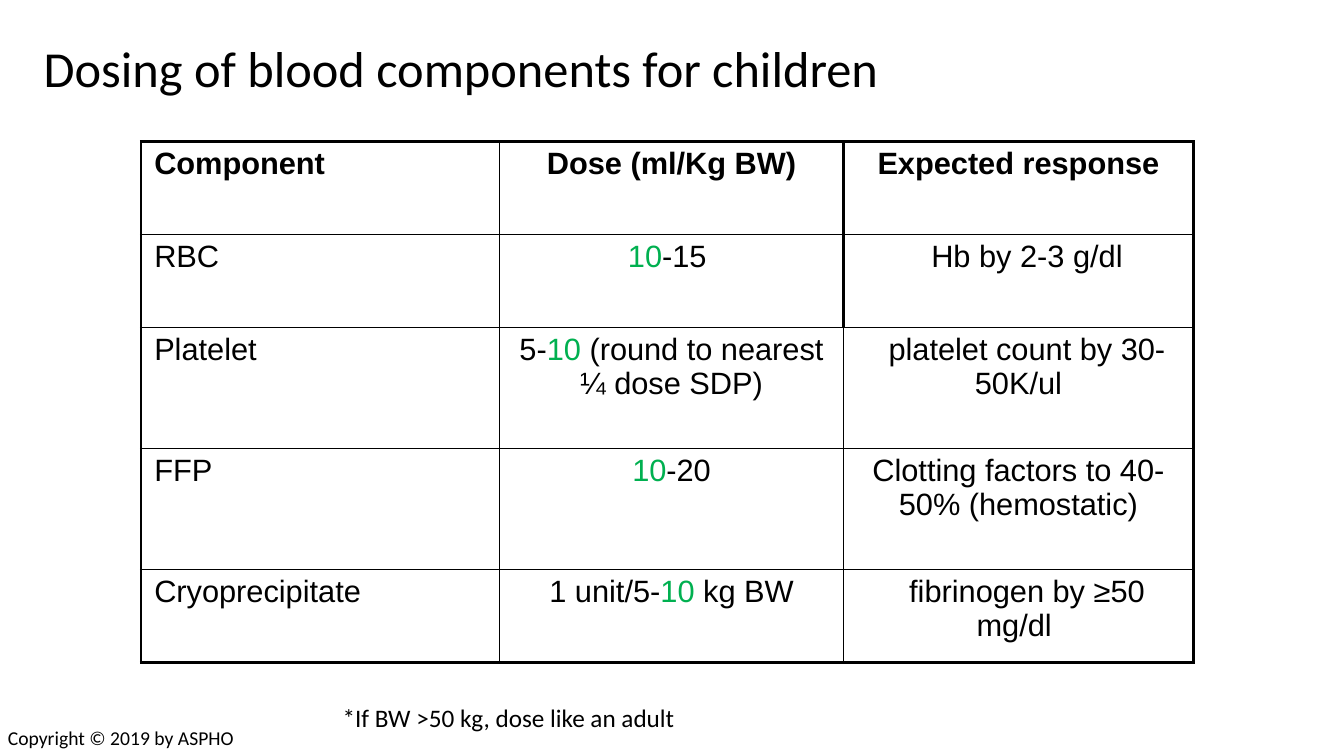
from lxml.etree import SubElement
from pptx import Presentation
from pptx.dml.color import RGBColor
from pptx.enum.text import MSO_ANCHOR as Anchor, MSO_AUTO_SIZE as AutoSize, PP_ALIGN as Align
from pptx.oxml import parse_xml
from pptx.oxml.ns import nsdecls, qn
from pptx.util import Pt

COLORS = {"ink": "000000", "key dose": "00B050"}
KEY_DOSE = "10"
THIN, THICK = 1, 2.25
SPACE_SHIFT = 12.2  # first-line indent of the rising responses

COLUMN_WIDTHS = (256.2, 245.4, 250.2)
ROW_HEIGHTS = (66.4, 66.4, 86.4, 86.4, 66.4)
DOSING = (
    ("Component", "Dose (ml/Kg BW)", "Expected response"),
    ("RBC", "10-15 ", "Hb by 2-3 g/dl"),
    ("Platelet", "5-10 (round to nearest ¼ dose SDP)", "platelet count by 30-50K/ul"),
    ("FFP", "10-20", "Clotting factors to 40-50% (hemostatic)"),
    ("Cryoprecipitate", "1 unit/5-10 kg BW", "fibrinogen by ≥50 mg/dl "),
)
INDENTED_ROWS = (1, 2, 4)


def style_font(font, size, face, color="ink", bold=False):
    font.size, font.name, font.bold = Pt(size), face, bold
    font.color.rgb = RGBColor.from_string(COLORS[color])


def add_title(slide, left, top, width, height):
    title = slide.shapes.title
    title.left, title.top, title.width, title.height = map(Pt, (left, top, width, height))
    title.text_frame.text = "Dosing of blood components for children"
    title.text_frame.vertical_anchor = Anchor.MIDDLE
    heading = title.text_frame.paragraphs[0]
    heading.alignment, heading.line_spacing = Align.LEFT, 0.9
    style_font(heading.runs[0].font, 36, "Calibri")


def add_note(slide, text, size, left, top, width, height):
    note = slide.shapes.add_textbox(*map(Pt, (left, top, width, height))).text_frame
    note.word_wrap, note.auto_size = True, AutoSize.SHAPE_TO_FIT_TEXT
    note.text = text
    style_font(note.paragraphs[0].runs[0].font, size, "Calibri")


def set_borders(cell, row, column):
    last_row, last_column = len(DOSING) - 1, len(COLUMN_WIDTHS) - 1
    # The divider before the responses is thick beside the first two rows
    thick = {
        "L": column == 0 or (column == 2 and row < 2),
        "R": column == last_column or (column == 1 and row < 2),
        "T": row == 0,
        "B": row == last_row,
    }
    properties = cell._tc.get_or_add_tcPr()
    for place, (side, is_thick) in enumerate(thick.items()):
        width = Pt(THICK if is_thick else THIN)
        line = parse_xml(f'<a:ln{side} {nsdecls("a")} w="{width}"/>')
        fill = SubElement(line, qn("a:solidFill"))
        SubElement(fill, qn("a:srgbClr"), val=COLORS["ink"])
        properties.insert(place, line)


def fill_cell(cell, text, row, column):
    cell.fill.background()
    cell.margin_left = cell.margin_right = Pt(9.4)
    cell.margin_top = cell.margin_bottom = Pt(3.6)
    cell.vertical_anchor = Anchor.TOP
    entry = cell.text_frame.paragraphs[0]
    entry.alignment = Align.CENTER if column else Align.LEFT
    if column == 2 and row in INDENTED_ROWS:
        entry._p.get_or_add_pPr().set("indent", str(Pt(SPACE_SHIFT)))
    # The usual dose is picked out in the dose column
    parts = text.partition(KEY_DOSE) if column == 1 else (text,)
    for part in filter(None, parts):
        run = entry.add_run()
        run.text = part
        color = "key dose" if part == KEY_DOSE else "ink"
        style_font(run.font, 22, "Arial", color, bold=row == 0)
    set_borders(cell, row, column)


def add_dosing_table(slide, left, top):
    frame = slide.shapes.add_table(
        len(DOSING), len(COLUMN_WIDTHS), Pt(left), Pt(top),
        Pt(sum(COLUMN_WIDTHS)), Pt(sum(ROW_HEIGHTS)))
    table = frame.table
    table.first_row = table.horz_banding = False
    for column, width in zip(table.columns, COLUMN_WIDTHS):
        column.width = Pt(width)
    for row, height in zip(table.rows, ROW_HEIGHTS):
        row.height = Pt(height)
    for row, texts in enumerate(DOSING):
        for column, text in enumerate(texts):
            fill_cell(table.cell(row, column), text, row, column)


def main():
    deck = Presentation()
    deck.slide_width, deck.slide_height = Pt(960), Pt(540)
    slide = deck.slides.add_slide(deck.slide_layouts[5])
    add_title(slide, 24, 18, 896, 66)
    add_dosing_table(slide, 100.8, 101)
    # Footnote and copyright line
    add_note(slide, "*If BW >50 kg, dose like an adult", 18, 237.6, 498.2, 262, 29)
    add_note(slide, "Copyright © 2019 by ASPHO", 14, -1.5, 514.8, 245, 24.5)
    deck.save("out.pptx")


if __name__ == "__main__":
    main()
